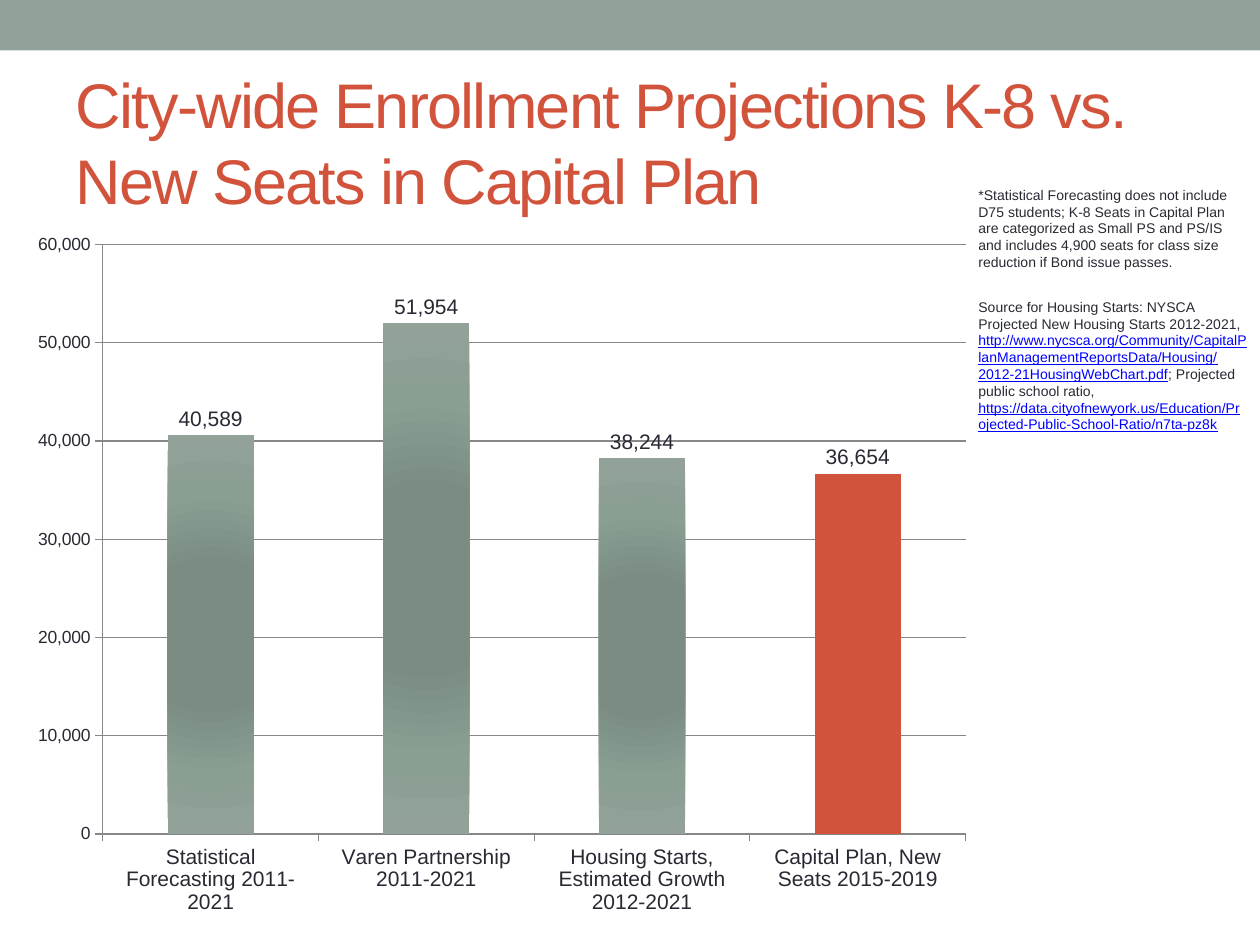
from lxml import etree
from pptx import Presentation
from pptx import util as u
from pptx.chart import data
from pptx.dml import color
from pptx.enum import chart as ch
from pptx.enum import shapes, text
from pptx.oxml import ns

Pt = u.Pt
FONT = "Arial"
SAGE, RUST, INK, LINK, RULE = "93A299", "D2533C", "292934", "0000FF", "878787"
SHADES = [(0, "7B8E82"), (34, "7B8D83"), (70, "8A9E92"), (100, SAGE)]
PROJECTIONS = [
    ("Statistical Forecasting 2011-2021", 40589),
    ("Varen Partnership 2011-2021", 51954),
    ("Housing Starts, Estimated Growth 2012-2021", 38244),
    ("Capital Plan, New Seats 2015-2019", 36654),
]
CAVEAT = ("*Statistical Forecasting does not include D75 students; K-8 Seats in Capital Plan "
          "are categorized as Small PS and PS/IS and includes 4,900 seats for class size "
          "reduction if Bond issue passes.")
HOUSING_URL = ("http://www.nycsca.org/Community/CapitalPlanManagementReportsData/Housing/"
               "2012-21HousingWebChart.pdf")
RATIO_URL = "https://data.cityofnewyork.us/Education/Projected-Public-School-Ratio/n7ta-pz8k"


def rgb(value):
    """Turn a hex string into a colour."""
    return color.RGBColor.from_string(value)


def style(font, size, hue=INK):
    """Set face, size and colour of a font."""
    font.name, font.size = FONT, Pt(size)
    font.color.rgb = rgb(hue)


def write(paragraph, words, size=8, hue=INK, underline=False, spacing=None):
    """Append one formatted run to a paragraph."""
    run = paragraph.add_run()
    run.text = words
    style(run.font, size, hue)
    if underline:
        run.font.underline = True
    if spacing is not None:
        run.font._element.set("spc", str(spacing * 100))


def add_band(slide, box):
    """Draw the plain band along the top edge."""
    band = slide.shapes.add_shape(shapes.MSO_SHAPE.RECTANGLE, *map(Pt, box))
    band.shadow.inherit = False
    band.fill.solid()
    band.fill.fore_color.rgb = rgb(SAGE)
    band.line.fill.background()


def add_title(slide, box, words):
    """Place and format the title placeholder."""
    title = slide.shapes.title
    title.left, title.top, title.width, title.height = map(Pt, box)
    frame = title.text_frame
    frame.word_wrap = True
    frame.auto_size = text.MSO_AUTO_SIZE.NONE
    frame.vertical_anchor = text.MSO_ANCHOR.MIDDLE
    heading = frame.paragraphs[0]
    heading.alignment = text.PP_ALIGN.LEFT
    write(heading, words, size=36, hue=RUST, spacing=-1)


def add_note(slide, box, passages):
    """Add a small side note made of (words, is_address) passages."""
    frame = slide.shapes.add_textbox(*map(Pt, box)).text_frame
    frame.word_wrap = True
    frame.auto_size = text.MSO_AUTO_SIZE.SHAPE_TO_FIT_TEXT
    for words, is_address in passages:
        write(frame.paragraphs[0], words, hue=LINK if is_address else INK, underline=is_address)


def shade(bar):
    """Fill a bar with the circular sage gradient."""
    bar.format.fill.gradient()
    gradient = bar.format.fill._xPr.find(ns.qn("a:gradFill"))
    for part in list(gradient):
        gradient.remove(part)
    stops = etree.SubElement(gradient, ns.qn("a:gsLst"))
    for position, hue in SHADES:
        stop = etree.SubElement(stops, ns.qn("a:gs"), pos=str(position * 1000))
        etree.SubElement(stop, ns.qn("a:srgbClr"), val=hue)
    circle = etree.SubElement(gradient, ns.qn("a:path"), path="circle")
    etree.SubElement(circle, ns.qn("a:fillToRect"), dict.fromkeys("ltrb", "100000"))


def add_projections(slide, box):
    """Add the column chart of projections and planned seats."""
    figures = data.CategoryChartData(number_format="#,##0")
    figures.categories = [name for name, _ in PROJECTIONS]
    figures.add_series("Series 1", [seats for _, seats in PROJECTIONS])
    chart = slide.shapes.add_chart(
        ch.XL_CHART_TYPE.COLUMN_CLUSTERED, *map(Pt, box), figures).chart
    chart.has_legend = chart.has_title = False
    style(chart.font, 10)

    for axis, size in ((chart.category_axis, 12), (chart.value_axis, 10)):
        style(axis.tick_labels.font, size)
        axis.major_tick_mark = ch.XL_TICK_MARK.OUTSIDE
        axis.format.line.color.rgb = rgb(RULE)
    scale = chart.value_axis
    scale.minimum_scale, scale.maximum_scale, scale.major_unit = 0, 60000, 10000
    scale.tick_labels.number_format = "#,##0"
    scale.tick_labels.number_format_is_linked = False
    scale.has_major_gridlines = True
    scale.major_gridlines.format.line.color.rgb = rgb(RULE)

    plot = chart.plots[0]
    plot.gap_width = 150
    plot.vary_by_categories = False
    bars = plot.series[0]
    bars.format.fill.solid()
    bars.format.fill.fore_color.rgb = rgb(SAGE)
    *forecasts, planned = range(len(PROJECTIONS))
    for index in forecasts:
        shade(bars.points[index])
    planned_fill = bars.points[planned].format.fill
    planned_fill.solid()
    planned_fill.fore_color.rgb = rgb(RUST)

    labels = bars.data_labels
    labels.show_value = True
    labels.number_format = "#,##0"
    labels.number_format_is_linked = False
    labels.position = ch.XL_LABEL_POSITION.OUTSIDE_END
    style(labels.font, 12)


def main():
    """Build the slide and save it."""
    deck = Presentation()
    deck.slide_width, deck.slide_height = Pt(720), Pt(540)
    slide = deck.slides.add_slide(deck.slide_layouts[5])
    add_band(slide, (0, 0, 720, 28.8))
    add_title(slide, (36, 41.8, 648, 77.8),
              "City-wide Enrollment Projections K-8 vs. New Seats in Capital Plan")
    add_note(slide, (552, 103, 168, 55.4), [(CAVEAT, False)])
    add_projections(slide, (10.8, 126, 552, 404))
    add_note(slide, (552, 167, 168, 94.3), [
        ("Source for Housing Starts: NYSCA Projected New Housing Starts 2012-2021, ", False),
        (HOUSING_URL, True),
        ("; Projected public school ratio, ", False),
        (RATIO_URL, True),
    ])
    deck.save("out.pptx")


if __name__ == "__main__":
    main()
